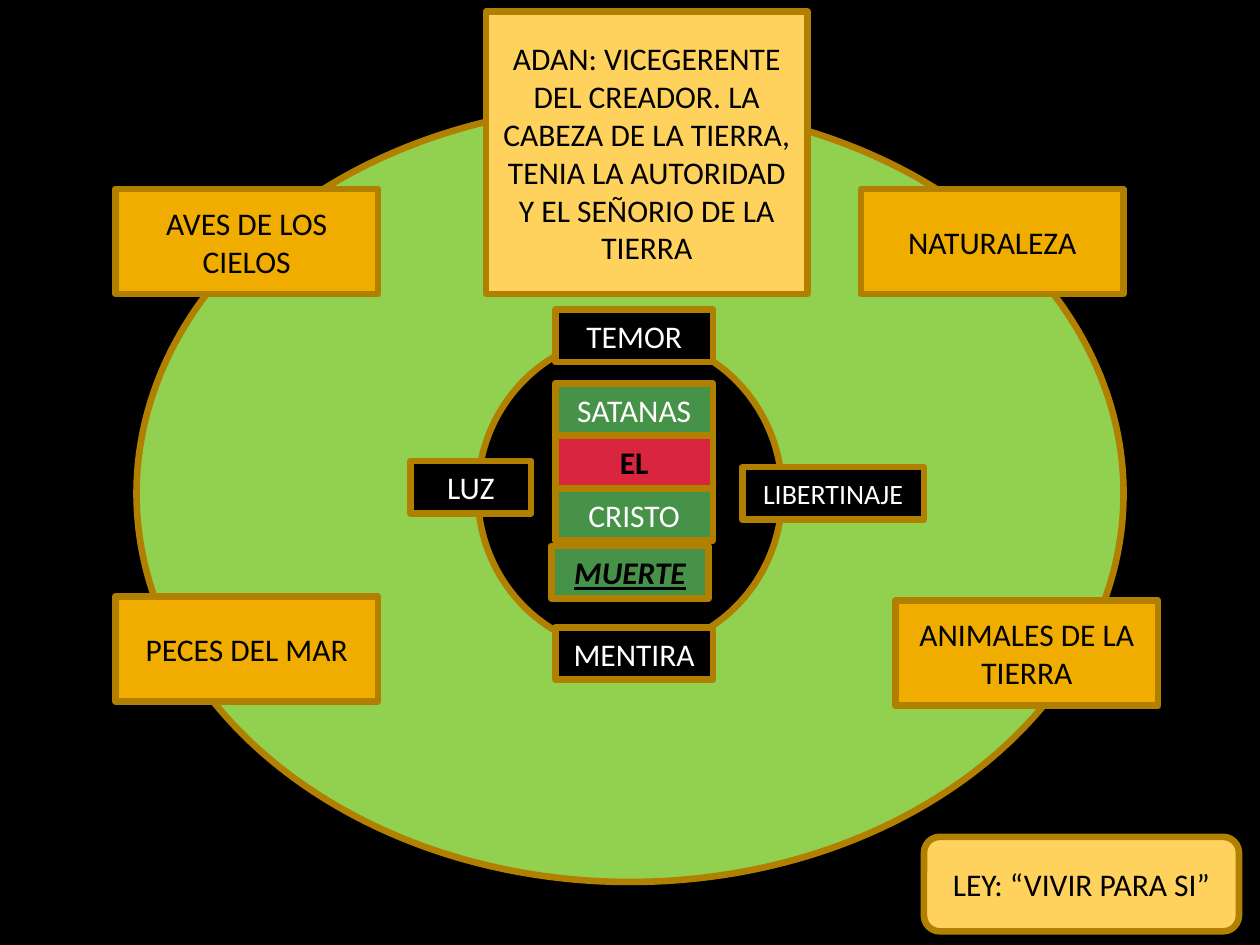
"""Build the slide on dominion over the earth and the law of living for oneself."""
from dataclasses import dataclass

from pptx import Presentation
from pptx.dml.color import RGBColor
from pptx.enum.shapes import MSO_SHAPE as Shape
from pptx.enum.text import MSO_ANCHOR as Anchor, PP_ALIGN as Align
from pptx.util import Inches, Pt


@dataclass(frozen=True)
class Theme:
    font: str = "Calibri"
    size: int = 18
    small: int = 16
    border: float = 3.78
    black: str = "000000"
    white: str = "FFFFFF"
    bronze: str = "B28000"
    meadow: str = "92D050"
    green: str = "479249"
    red: str = "D9253E"
    cream: str = "FFD25D"
    amber: str = "F0AD00"


THEME = Theme()
WIDTH, HEIGHT = Inches(10), Inches(7.5)
COLUMNS, ROWS = 120, 90
LABEL_LEFT, LABEL_WIDTH, LABEL_HEIGHT = 52.9, 15, 5
STACK_TOP = 36.5
REALM_WIDTH, REALM_HEIGHT = 25, 10

CIRCLES = [
    ((13, 10, 94, 74), THEME.meadow),
    ((45.5, 32, 29, 30), THEME.black),
]
MUERTE = ("MUERTE", 52.5, 52)
STACK = [
    ("SATANAS", THEME.green, THEME.white, False),
    ("EL", THEME.red, THEME.black, True),
    ("CRISTO", THEME.green, THEME.white, False),
]
TRAITS = [
    ("MENTIRA", LABEL_LEFT, 59.75, LABEL_WIDTH, THEME.size),
    ("LUZ", 39.1, 43.9, 11.5, THEME.size),
    ("LIBERTINAJE", 70.7, 44.5, 17.3, THEME.small),
    ("TEMOR", LABEL_LEFT, 29.5, LABEL_WIDTH, THEME.size),
]
ADAN = [
    "ADAN: VICEGERENTE DEL CREADOR. LA",
    "CABEZA DE LA TIERRA, TENIA LA AUTORIDAD Y EL SEÑORIO DE LA TIERRA",
]
LEY = ["LEY: “VIVIR PARA SI”"]
REALMS = [
    ("AVES DE LOS CIELOS", 11, 18),
    ("NATURALEZA", 82, 18),
    ("ANIMALES DE LA TIERRA", 85.3, 57.2),
    ("PECES DEL MAR", 11, 56.8),
]


def color(value):
    return RGBColor.from_string(value)


def add_box(slide, area, fill, lines=(), ink=THEME.black, size=THEME.size,
            kind=Shape.RECTANGLE, bold=False, emphasis=False):
    left, top, width, height = area
    shape = slide.shapes.add_shape(
        kind, int(WIDTH * left / COLUMNS), int(HEIGHT * top / ROWS),
        int(WIDTH * width / COLUMNS), int(HEIGHT * height / ROWS))
    shape.shadow.inherit = False
    shape.fill.solid()
    shape.fill.fore_color.rgb = color(fill)
    shape.line.color.rgb = color(THEME.bronze)
    shape.line.width = Pt(THEME.border)
    frame = shape.text_frame
    frame.word_wrap = True
    frame.vertical_anchor = Anchor.MIDDLE
    for index, line in enumerate(lines):
        paragraph = frame.add_paragraph() if index else frame.paragraphs[0]
        paragraph.text = line
        paragraph.alignment = Align.CENTER
        font = paragraph.font
        font.name, font.size = THEME.font, Pt(size)
        font.color.rgb = color(ink)
        font.bold = bold
        font.italic = font.underline = emphasis


def main():
    presentation = Presentation()
    presentation.slide_width, presentation.slide_height = WIDTH, HEIGHT
    slide = presentation.slides.add_slide(presentation.slide_layouts[6])
    slide.background.fill.solid()
    slide.background.fill.fore_color.rgb = color(THEME.black)

    for area, fill in CIRCLES:
        add_box(slide, area, fill, kind=Shape.OVAL)
    text, left, top = MUERTE
    add_box(slide, (left, top, LABEL_WIDTH, LABEL_HEIGHT), THEME.green, [text],
            bold=True, emphasis=True)
    for row, (text, fill, ink, bold) in enumerate(STACK):
        area = (LABEL_LEFT, STACK_TOP + row * LABEL_HEIGHT, LABEL_WIDTH, LABEL_HEIGHT)
        add_box(slide, area, fill, [text], ink, bold=bold)
    for text, left, top, width, size in TRAITS:
        add_box(slide, (left, top, width, LABEL_HEIGHT), THEME.black, [text],
                THEME.white, size)
    add_box(slide, (46.3, 1.1, 30.6, 26.9), THEME.cream, ADAN)
    add_box(slide, (88, 79.7, 30, 9), THEME.cream, LEY, kind=Shape.ROUNDED_RECTANGLE)
    for text, left, top in REALMS:
        add_box(slide, (left, top, REALM_WIDTH, REALM_HEIGHT), THEME.amber, [text])

    presentation.save("out.pptx")


if __name__ == "__main__":
    main()
